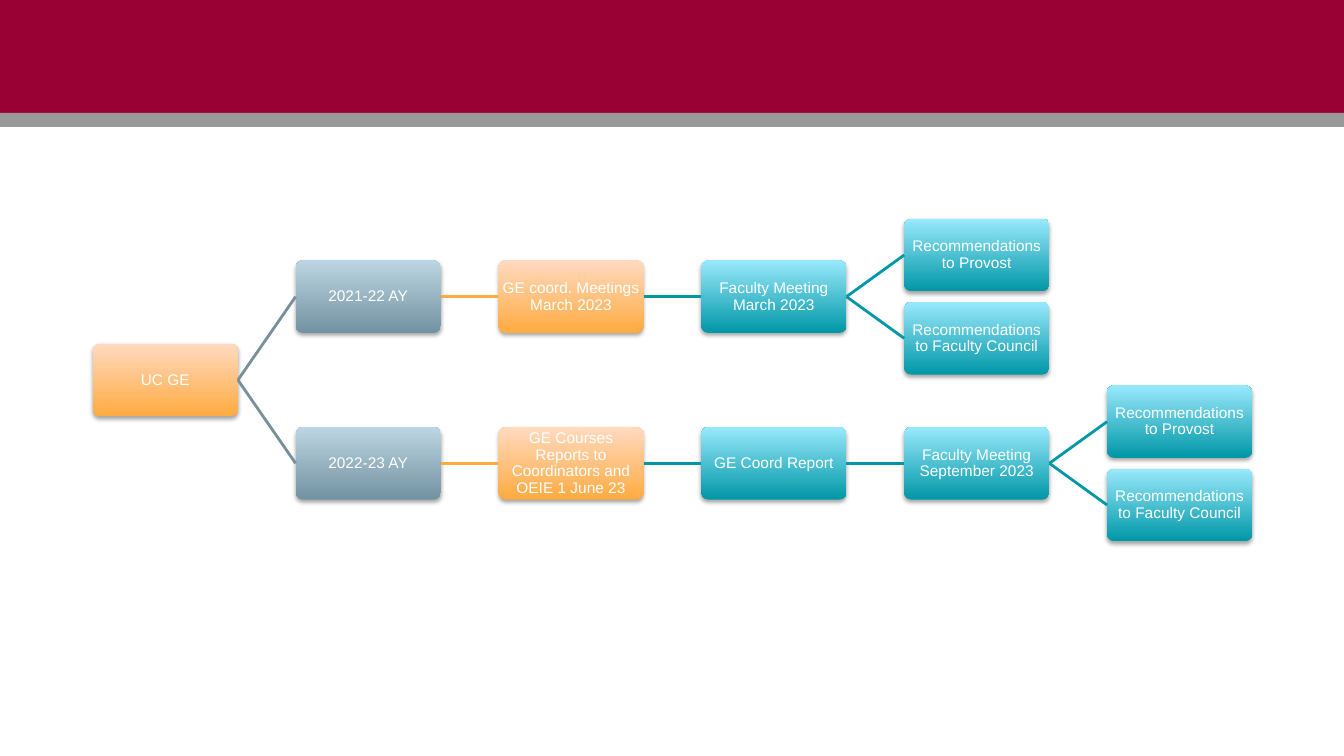
"""Build the general education review timeline slide."""
from lxml import etree
from pptx import Presentation
from pptx.dml.color import RGBColor
from pptx.enum.shapes import MSO_CONNECTOR, MSO_SHAPE
from pptx.enum.text import MSO_ANCHOR, PP_ALIGN
from pptx.oxml.ns import qn
from pptx.util import Inches, Pt

RECTANGLE = MSO_SHAPE.RECTANGLE
ROUNDED = MSO_SHAPE.ROUNDED_RECTANGLE
STRAIGHT = MSO_CONNECTOR.STRAIGHT
MIDDLE = MSO_ANCHOR.MIDDLE
CENTER = PP_ALIGN.CENTER
LEFT_SIDE, RIGHT_SIDE = 1, 3

COLORS = {
    "crimson": "990033", "gray": "999999", "white": "FFFFFF", "shadow": "000000",
    "orange": "FFAB40", "orange_top": "FFDAC0", "orange_link": "FFAB40",
    "slate": "7392A1", "slate_top": "BDD5E2", "slate_link": "78909C",
    "teal": "0097A7", "teal_top": "99E9FC", "teal_link": "0097A7",
}
COLUMN_START, COLUMN_STEP = 0.92, (10.98 - 0.92) / 5
ROW_START, ROW_STEP = 2.17, (4.65 - 2.17) / 6
BOX_WIDTH, BOX_HEIGHT = 1.44, 0.72

STEPS = [
    ("root", None, 0, 3, "orange", "UC GE"),
    ("first_year", "root", 1, 1, "slate", "2021-22 AY"),
    ("coordinators", "first_year", 2, 1, "orange", "GE coord. Meetings March 2023"),
    ("spring_faculty", "coordinators", 3, 1, "teal", "Faculty Meeting March 2023"),
    ("spring_provost", "spring_faculty", 4, 0, "teal", "Recommendations to Provost"),
    ("spring_council", "spring_faculty", 4, 2, "teal", "Recommendations to Faculty Council"),
    ("second_year", "root", 1, 5, "slate", "2022-23 AY"),
    ("course_reports", "second_year", 2, 5, "orange",
     "GE Courses Reports to Coordinators and OEIE 1 June 23"),
    ("coord_report", "course_reports", 3, 5, "teal", "GE Coord Report"),
    ("fall_faculty", "coord_report", 4, 5, "teal", "Faculty Meeting September 2023"),
    ("fall_provost", "fall_faculty", 5, 4, "teal", "Recommendations to Provost"),
    ("fall_council", "fall_faculty", 5, 6, "teal", "Recommendations to Faculty Council"),
]


def rgb(name):
    return RGBColor.from_string(COLORS[name])


def apply(target, values):
    for name, value in values.items():
        setattr(target, name, value)


class TimelinePage:
    """Hold the page and the style of its elements."""

    font = {"name": "Arial", "size": Pt(11)}
    paragraph = {"alignment": CENTER, "line_spacing": 0.9}
    frame = {"word_wrap": True, "vertical_anchor": MIDDLE,
             **{f"margin_{side}": Inches(0.01) for side in ("left", "top", "right", "bottom")}}

    def __init__(self, page):
        self.page = page

    def shape(self, kind, left, top, width, height):
        shape = self.page.shapes.add_shape(
            kind, Inches(left), Inches(top), Inches(width), Inches(height))
        shape.line.fill.background()
        shape.shadow.inherit = False
        return shape

    def band(self, top, height, color):
        band = self.shape(RECTANGLE, -0.01, top, 13.35, height)
        band.fill.solid()
        band.fill.fore_color.rgb = rgb(color)

    def box(self, column, row, color, text):
        box = self.shape(ROUNDED, COLUMN_START + column * COLUMN_STEP,
                         ROW_START + row * ROW_STEP, BOX_WIDTH, BOX_HEIGHT)
        box.adjustments[0] = 0.1
        box.fill.gradient()
        box.fill.gradient_angle = 90
        for stop, name in zip(box.fill.gradient_stops, (color, color + "_top")):
            stop.color.rgb = rgb(name)
        self.drop_shadow(box)
        apply(box.text_frame, self.frame)
        para = box.text_frame.paragraphs[0]
        apply(para, self.paragraph)
        span = para.add_run()
        span.text = text
        apply(span.font, self.font)
        span.font.color.rgb = rgb("white")
        return box

    def drop_shadow(self, box):
        effects = box._element.spPr.find(qn("a:effectLst"))
        shadow = etree.SubElement(effects, qn("a:outerShdw"), blurRad=str(Pt(3.1)),
                                  dist=str(Pt(1.8)), dir="5400000", rotWithShape="0")
        color = etree.SubElement(shadow, qn("a:srgbClr"), val=COLORS["shadow"])
        etree.SubElement(color, qn("a:alpha"), val="35000")

    def link(self, parent, child, color):
        link = self.page.shapes.add_connector(STRAIGHT, 0, 0, 0, 0)
        link.begin_connect(parent, RIGHT_SIDE)
        link.end_connect(child, LEFT_SIDE)
        link.line.width = Pt(2)
        link.line.color.rgb = rgb(color + "_link")
        etree.SubElement(link._element.spPr, qn("a:effectLst"))


def main():
    deck = Presentation()
    deck.slide_width, deck.slide_height = Inches(13.33), Inches(7.5)
    timeline = TimelinePage(deck.slides.add_slide(deck.slide_layouts[6]))
    timeline.band(-0.01, 1.13, "crimson")
    timeline.band(1.12, 0.14, "gray")
    boxes = {}
    for name, parent, column, row, color, text in STEPS:
        boxes[name] = timeline.box(column, row, color, text)
        if parent:
            timeline.link(boxes[parent], boxes[name], color)
    deck.save("out.pptx")


if __name__ == "__main__":
    main()
